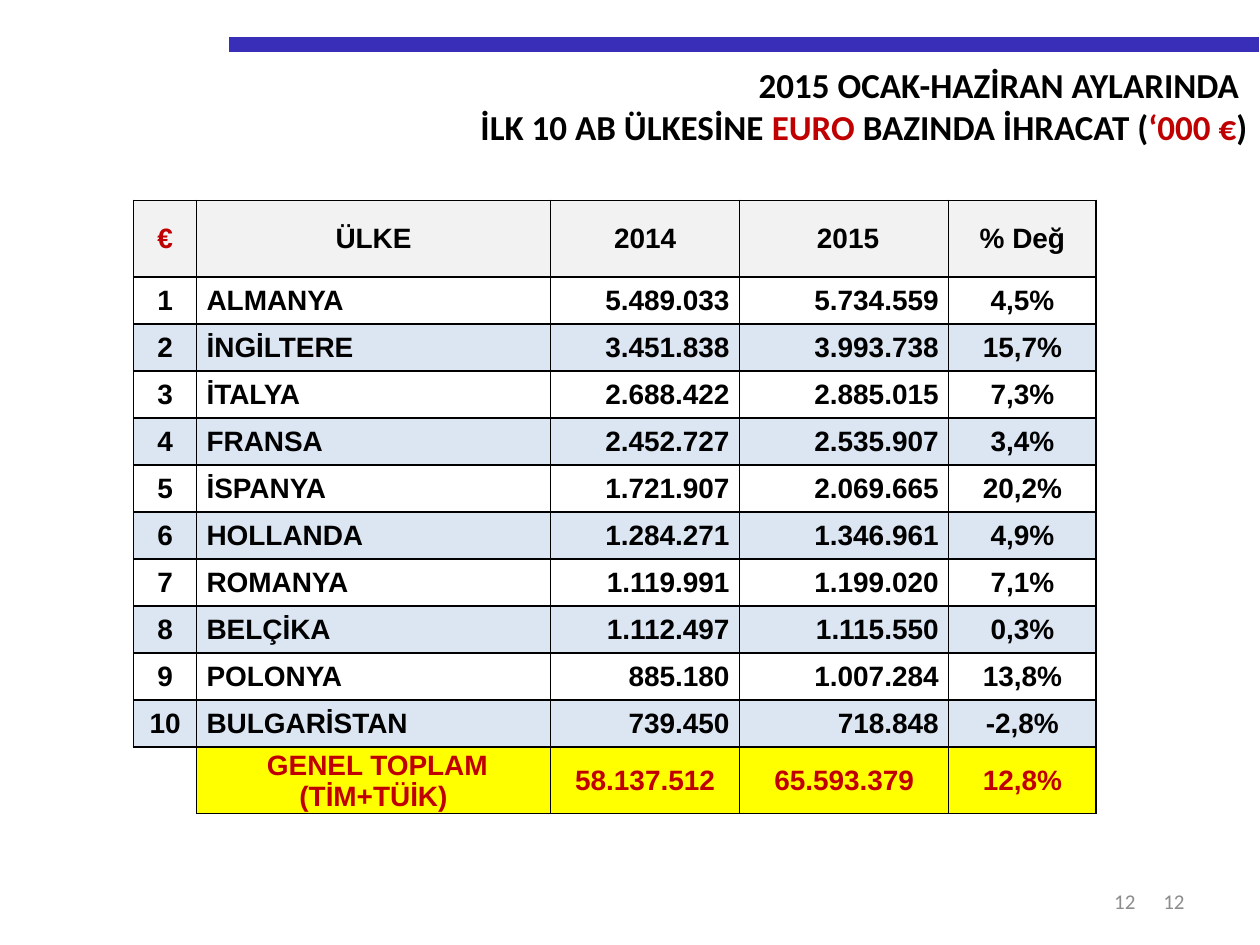
from lxml.etree import SubElement
from pptx import Presentation
from pptx.dml.color import RGBColor
from pptx.enum.shapes import MSO_CONNECTOR
from pptx.enum.text import MSO_ANCHOR, PP_ALIGN
from pptx.oxml.ns import qn
from pptx.util import Inches, Pt

BLACK, RED, GREY, BLUE = "000000", "C00000", "8C8C8C", "382EB8"
HEADER_FILL, BAND_FILL, TOTAL_FILL, WHITE = "F2F2F2", "DCE6F2", "FFFF00", "FFFFFF"

TITLE = [
    [("2015 OCAK-HAZİRAN AYLARINDA ", BLACK)],
    [("İLK 10 AB ÜLKESİNE ", BLACK), ("EURO", RED), (" BAZINDA İHRACAT (", BLACK),
     ("‘000 €", RED), (")", BLACK)],
]
HEADER = ["€", "ÜLKE", "2014", " 2015", "% Değ"]
COUNTRIES = [
    ("ALMANYA", "5.489.033", "5.734.559", "4,5%"),
    ("İNGİLTERE", "3.451.838", "3.993.738", "15,7%"),
    ("İTALYA", "2.688.422", "2.885.015", "7,3%"),
    ("FRANSA", "2.452.727", "2.535.907", "3,4%"),
    ("İSPANYA", "1.721.907", "2.069.665", "20,2%"),
    ("HOLLANDA", "1.284.271", "1.346.961", "4,9%"),
    ("ROMANYA", "1.119.991", "1.199.020", "7,1%"),
    ("BELÇİKA", "1.112.497", "1.115.550", "0,3%"),
    ("POLONYA", "885.180", "1.007.284", "13,8%"),
    ("BULGARİSTAN", "739.450", "718.848", "-2,8%"),
]
TOTAL = ["", " GENEL TOPLAM (TİM+TÜİK)", "58.137.512", "65.593.379", "12,8%"]
COLUMN_WIDTHS = [0.5, 2.81, 1.5, 1.66, 1.17]
HEADER_HEIGHT, TOTAL_HEIGHT = 0.61, 0.53
ALIGNMENTS = [PP_ALIGN.CENTER, PP_ALIGN.LEFT, PP_ALIGN.RIGHT, PP_ALIGN.RIGHT, PP_ALIGN.CENTER]
WIDE, TIGHT = (0.1, 0.05, 0.1, 0.05), (0.01, 0.01, 0.01, 0)
INDENT_LEFT, INDENT_RIGHT = (0.08, 0.01, 0.01, 0), (0.01, 0.01, 0.08, 0)
BODY_MARGINS = [WIDE, INDENT_LEFT, INDENT_RIGHT, INDENT_RIGHT, TIGHT]


def color(value):
    return RGBColor.from_string(value)


def style_font(font, name, size, value, bold=False):
    font.name, font.size, font.bold = name, Pt(size), bold
    font.color.rgb = color(value)


def set_margins(target, margins):
    (target.margin_left, target.margin_top,
     target.margin_right, target.margin_bottom) = [Inches(side) for side in margins]


def add_top_rule(page, left, top, width):
    rule = page.shapes.add_connector(
        MSO_CONNECTOR.STRAIGHT, Inches(left), Inches(top), Inches(left + width), Inches(top))
    rule.line.color.rgb = color(BLUE)
    rule.line.width = Pt(8.5)
    SubElement(rule._element.spPr, qn("a:effectLst"))


def place_title(page, left, top, width, height):
    title = page.shapes.title
    title.left, title.top = Inches(left), Inches(top)
    title.width, title.height = Inches(width), Inches(height)
    frame = title.text_frame
    frame.word_wrap = True
    frame.vertical_anchor = MSO_ANCHOR.TOP
    set_margins(frame, WIDE)
    for index, line in enumerate(TITLE):
        para = frame.paragraphs[0] if index == 0 else frame.add_paragraph()
        para.alignment = PP_ALIGN.RIGHT
        for text, value in line:
            span = para.add_run()
            span.text = text
            style_font(span.font, "Calibri", 20, value, True)


def add_page_number(page, left, top, width, height):
    box = page.shapes.add_textbox(Inches(left), Inches(top), Inches(width), Inches(height))
    frame = box.text_frame
    frame.word_wrap = True
    frame.vertical_anchor = MSO_ANCHOR.MIDDLE
    frame.text = "12"
    para = frame.paragraphs[0]
    para.alignment = PP_ALIGN.RIGHT
    style_font(para.runs[0].font, "Calibri", 12, GREY)


def set_borders(cell, visible):
    properties = cell._tc.get_or_add_tcPr()
    for side in "LRTB":
        border = SubElement(properties, qn(f"a:ln{side}"), w=str(Pt(1)))
        if side in visible:
            fill = SubElement(border, qn("a:solidFill"))
            SubElement(fill, qn("a:srgbClr"), val=BLACK)
        else:
            SubElement(border, qn("a:noFill"))


def format_cell(cell, text, fill, text_color, alignment, margins):
    set_borders(cell, "LRTB" if text else "RT")
    cell.vertical_anchor = MSO_ANCHOR.MIDDLE
    set_margins(cell, margins)
    if not text:
        cell.fill.background()
        return
    cell.fill.solid()
    cell.fill.fore_color.rgb = color(fill)
    cell.text_frame.text = text
    para = cell.text_frame.paragraphs[0]
    para.alignment = alignment
    style_font(para.runs[0].font, "Arial", 16, text_color, True)


def add_export_table(page, left, top, width, height):
    rows = [HEADER, *([str(rank), *row] for rank, row in enumerate(COUNTRIES, 1)), TOTAL]
    last = len(rows) - 1
    table = page.shapes.add_table(
        len(rows), len(HEADER), Inches(left), Inches(top), Inches(width), Inches(height)).table
    table.first_row = table.horz_banding = False
    for column, column_width in zip(table.columns, COLUMN_WIDTHS):
        column.width = Inches(column_width)
    body_height = (height - HEADER_HEIGHT - TOTAL_HEIGHT) / len(COUNTRIES)
    for r, row in enumerate(rows):
        table.rows[r].height = Inches({0: HEADER_HEIGHT, last: TOTAL_HEIGHT}.get(r, body_height))
        for c, text in enumerate(row):
            alignment, margins, text_color = PP_ALIGN.CENTER, WIDE, BLACK
            if r == 0:
                fill = HEADER_FILL
                text_color = RED if c == 0 else BLACK
            elif r == last:
                fill, text_color, margins = TOTAL_FILL, RED, TIGHT
            else:
                fill = WHITE if r % 2 else BAND_FILL
                alignment, margins = ALIGNMENTS[c], BODY_MARGINS[c]
            format_cell(table.cell(r, c), text, fill, text_color, alignment, margins)


def main():
    deck = Presentation()
    deck.slide_width, deck.slide_height = Inches(10), Inches(7.5)
    page = deck.slides.add_slide(deck.slide_layouts[5])
    add_top_rule(page, 1.82, 0.35, 8.17)
    place_title(page, 1.06, 0.45, 8.94, 0.77)
    add_export_table(page, 1.06, 1.59, 7.64, 4.87)
    add_page_number(page, 7.17, 6.95, 2.33, 0.4)
    add_page_number(page, 7.01, 6.95, 2.1, 0.4)
    deck.save("out.pptx")


if __name__ == "__main__":
    main()
